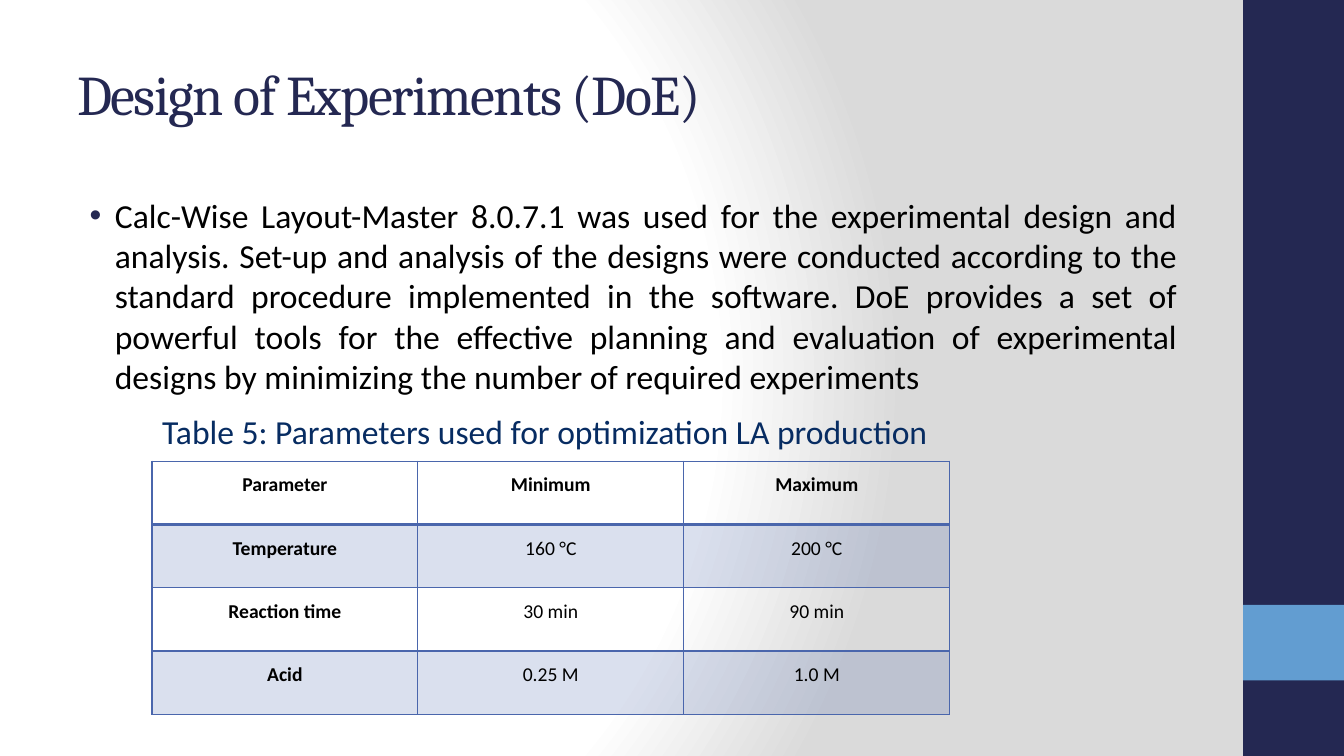
from dataclasses import dataclass

from lxml.etree import SubElement
from pptx import Presentation
from pptx.dml.color import RGBColor
from pptx.enum.shapes import MSO_SHAPE
from pptx.enum.text import MSO_ANCHOR, PP_ALIGN
from pptx.oxml import parse_xml
from pptx.oxml.ns import nsdecls, qn
from pptx.util import Pt


@dataclass(frozen=True)
class Theme:
    """Colours, fonts and type sizes of the slide."""
    navy: str = "242852"
    sky: str = "629DD1"
    border: str = "4A66AC"
    caption: str = "072C62"
    black: str = "000000"
    white: str = "FFFFFF"
    grey: str = "DADADA"
    heading_font: str = "Cambria"
    body_font: str = "Calibri"
    title_size: int = 40
    body_size: int = 24
    cell_size: int = 14


THEME = Theme()
PARAMETERS = [
    ["Parameter", "Minimum", "Maximum"],
    ["Temperature", "160 °C", "200 °C"],
    ["Reaction time", "30 min", "90 min"],
    ["Acid", "0.25 M", "1.0 M"],
]


def write_text(frame, text, size=THEME.body_size, color=THEME.black, font=THEME.body_font,
               bold=False, align=PP_ALIGN.LEFT, line_spacing=None, tracking=None):
    """Write one formatted paragraph into a text frame and return it."""
    frame.word_wrap = True
    paragraph = frame.paragraphs[0]
    paragraph.alignment = align
    if line_spacing:
        paragraph.line_spacing = line_spacing
    run = paragraph.add_run()
    run.text = text
    run.font.size = Pt(size)
    run.font.name = font
    run.font.bold = bold
    run.font.color.rgb = RGBColor.from_string(color)
    if tracking:
        run.font._element.set("spc", str(tracking * 100))
    return paragraph


def add_background(slide):
    """Fill the slide with a circular gradient from white to grey."""
    stops = [(0, THEME.white), (75, THEME.white), (100, THEME.grey)]
    stop_xml = "".join(f'<a:gs pos="{position * 1000}"><a:srgbClr val="{color}"/></a:gs>'
                       for position, color in stops)
    background = parse_xml(
        f'<p:bg {nsdecls("p", "a")}><p:bgPr><a:gradFill rotWithShape="1">'
        f'<a:gsLst>{stop_xml}</a:gsLst><a:path path="circle">'
        '<a:fillToRect l="20000" t="50000" r="100000" b="50000"/></a:path>'
        '</a:gradFill><a:effectLst/></p:bgPr></p:bg>')
    slide._element.cSld.insert(0, background)


def add_side_band(slide, left, top, width, height):
    """Draw the dark band with its light accent at four fifths of the height."""
    parts = [(top, height, THEME.navy), (top + height * 0.8, height * 0.1, THEME.sky)]
    for part_top, part_height, color in parts:
        shape = slide.shapes.add_shape(MSO_SHAPE.RECTANGLE, Pt(left), Pt(part_top),
                                       Pt(width), Pt(part_height))
        shape.shadow.inherit = False
        shape.fill.solid()
        shape.fill.fore_color.rgb = RGBColor.from_string(color)
        shape.line.fill.background()


def add_title(slide, left, top, width, height, text):
    """Place the slide title, centred vertically in its box."""
    frame = slide.shapes.add_textbox(Pt(left), Pt(top), Pt(width), Pt(height)).text_frame
    frame.vertical_anchor = MSO_ANCHOR.MIDDLE
    write_text(frame, text, size=THEME.title_size, color=THEME.navy,
               font=THEME.heading_font, tracking=-1)


def add_bullet(slide, left, top, width, height, text):
    """Place a justified paragraph with a hanging bullet."""
    frame = slide.shapes.add_textbox(Pt(left), Pt(top), Pt(width), Pt(height)).text_frame
    paragraph = write_text(frame, text, align=PP_ALIGN.JUSTIFY)
    properties = paragraph._p.get_or_add_pPr()
    properties.set("marL", str(Pt(27)))
    properties.set("indent", str(Pt(-18)))
    bullet_color = SubElement(properties, qn("a:buClr"))
    SubElement(bullet_color, qn("a:srgbClr"), val=THEME.navy)
    SubElement(properties, qn("a:buFont"), typeface="Arial")
    SubElement(properties, qn("a:buChar"), char="•")


def add_caption(slide, left, top, width, height, text):
    """Place the table caption in an unfilled rounded box."""
    shape = slide.shapes.add_shape(MSO_SHAPE.ROUNDED_RECTANGLE, Pt(left), Pt(top),
                                   Pt(width), Pt(height))
    shape.shadow.inherit = False
    shape.fill.background()
    shape.line.fill.background()
    shape.text_frame.vertical_anchor = MSO_ANCHOR.MIDDLE
    write_text(shape.text_frame, text, color=THEME.caption)


def style_cell(cell, shaded, line_widths):
    """Set the fill of a cell and its left, right, top and bottom borders."""
    if shaded:
        cell.fill.solid()
        cell.fill.fore_color.rgb = RGBColor.from_string(THEME.border)
        color = cell._tc.tcPr.find(f'.//{qn("a:srgbClr")}')
        SubElement(color, qn("a:alpha"), val="20000")
    else:
        cell.fill.background()
    for index, (side, width) in enumerate(zip("LRTB", line_widths)):
        cell._tc.tcPr.insert(index, parse_xml(
            f'<a:ln{side} {nsdecls("a")} w="{Pt(width)}"><a:solidFill>'
            f'<a:srgbClr val="{THEME.border}"/></a:solidFill></a:ln{side}>'))


def add_parameter_table(slide, left, top, width, height, rows):
    """Draw the table with bold headings and every second row shaded."""
    table = slide.shapes.add_table(len(rows), len(rows[0]), Pt(left), Pt(top),
                                   Pt(width), Pt(height)).table
    table.first_row = table.horz_banding = False
    for row_index, row in enumerate(rows):
        for column_index, text in enumerate(row):
            cell = table.cell(row_index, column_index)
            cell.margin_left = cell.margin_right = Pt(5)
            cell.margin_top = cell.margin_bottom = Pt(0)
            write_text(cell.text_frame, text, size=THEME.cell_size, align=PP_ALIGN.CENTER,
                       bold=row_index == 0 or column_index == 0, line_spacing=1.5)
            top_width = 2 if row_index == 1 else 1
            bottom_width = 2 if row_index == 0 else 1
            style_cell(cell, row_index % 2 == 1, (1, 1, top_width, bottom_width))


def main():
    """Build the slide and save it."""
    presentation = Presentation()
    presentation.slide_width, presentation.slide_height = Pt(960), Pt(540)
    slide = presentation.slides.add_slide(presentation.slide_layouts[6])
    add_background(slide)
    add_side_band(slide, 888, 0, 72, 540)
    add_title(slide, 48, 21.6, 800, 90, "Design of Experiments (DoE)")
    add_bullet(slide, 48, 135.5, 800, 155,
               "Calc-Wise Layout-Master 8.0.7.1 was used for the experimental design and "
               "analysis. Set-up and analysis of the designs were conducted according to the "
               "standard procedure implemented in the software. DoE provides a set of powerful "
               "tools for the effective planning and evaluation of experimental designs by "
               "minimizing the number of required experiments")
    add_parameter_table(slide, 108.5, 329.5, 570, 180.8, PARAMETERS)
    add_caption(slide, 107.3, 292.5, 596, 31,
                "Table 5: Parameters used for optimization LA production")
    presentation.save("out.pptx")


if __name__ == "__main__":
    main()
